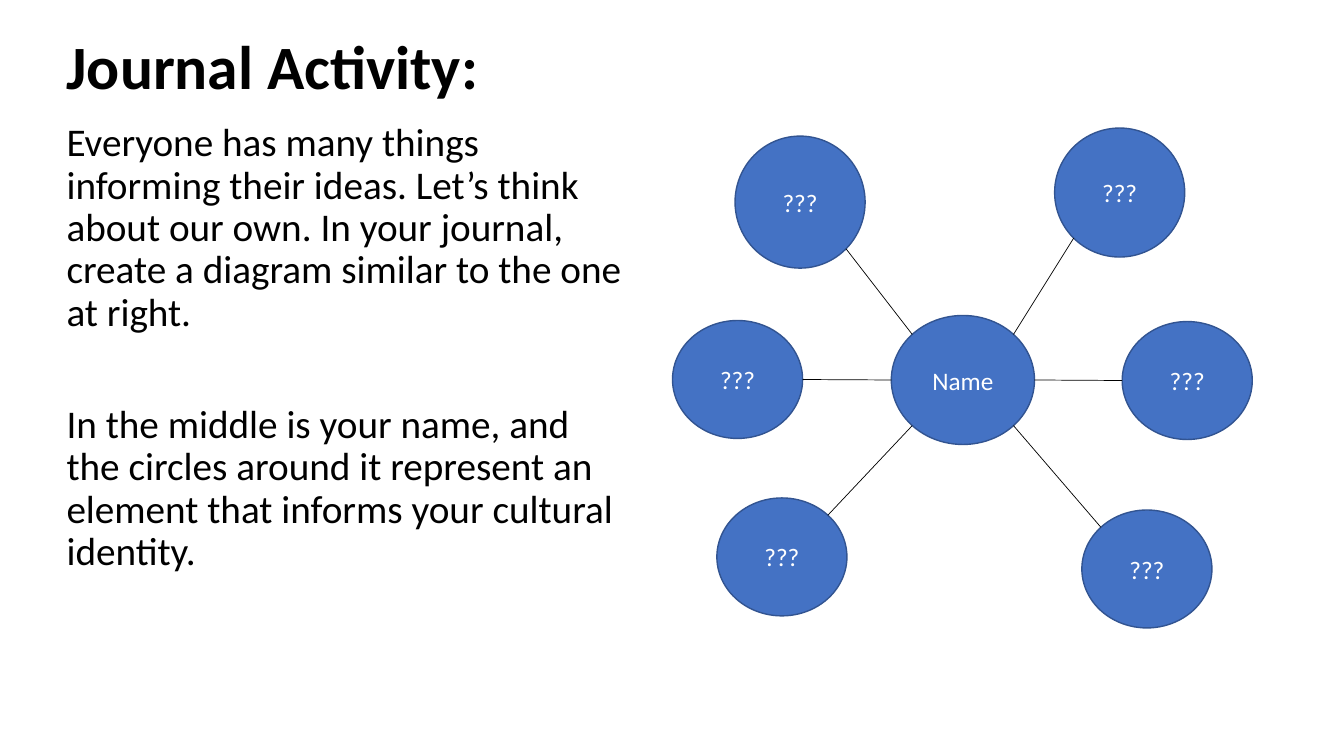
from math import sqrt

from lxml.etree import SubElement
from pptx import Presentation
from pptx.dml.color import RGBColor
from pptx.enum.shapes import MSO_CONNECTOR as CONN, MSO_SHAPE as SHAPE
from pptx.enum.text import MSO_ANCHOR as ANCHOR, MSO_AUTO_SIZE as FIT, PP_ALIGN as ALIGN
from pptx.oxml.ns import qn
from pptx.util import Inches, Pt


def rgb(hex_str):
    return RGBColor.from_string(hex_str)


def write(p, text, color, para, font):
    r = p.add_run()
    r.text = text
    r.font.color.rgb = rgb(color)
    for target, values in ((p, para), (r.font, {"name": "Calibri", **font})):
        for name, value in values.items():
            setattr(target, name, value)


prs = Presentation()
prs.slide_width, prs.slide_height = Inches(13.33), Inches(7.5)
s = prs.slides.add_slide(prs.slide_layouts[1])
title, body = s.shapes.title, s.placeholders[1]

# Title and body frames
for sp, box, anchor in ((title, (0.56, 0.19, 11.5, 0.99), ANCHOR.MIDDLE),
                        (body, (0.56, 1.17, 5.71, 5.84), ANCHOR.TOP)):
    sp.left, sp.top, sp.width, sp.height = map(Inches, box)
    tf = sp.text_frame
    tf.word_wrap, tf.auto_size, tf.vertical_anchor = True, FIT.NONE, anchor

write(title.text_frame.paragraphs[0], "Journal Activity:", "000000",
      {"alignment": ALIGN.LEFT, "line_spacing": 0.9}, {"size": Pt(44), "bold": True})

# Instructions: two unbulleted paragraphs with a wide gap between them
instructions = (
    ("Everyone has many things informing their ideas. Let’s think about our own. "
     "In your journal, create a diagram similar to the one at right.", 10),
    ("In the middle is your name, and the circles around it represent an element "
     "that informs your cultural identity.", 50),
)
tf = body.text_frame
for i, (text, before) in enumerate(instructions):
    p = tf.add_paragraph() if i else tf.paragraphs[0]
    write(p, text, "000000", {"line_spacing": 0.9, "space_before": Pt(before)},
          {"size": Pt(28)})
    pPr = p._p.get_or_add_pPr()
    pPr.set("marL", "0")
    pPr.set("indent", "0")
    SubElement(pPr, qn("a:buNone"))

# Circles: label, left, top, width, height, side of the hub (column, row)
hub = ("Name", 8.84, 3.13, 1.42, 1.28, 0, 0)
ideas = [("???", x, y, 1.29, h, col, row) for x, y, h, col, row in (
    (7.29, 1.35, 1.31, -1, -1),
    (10.46, 1.27, 1.28, 1, -1),
    (10.73, 5.06, 1.17, 1, 1),
    (11.13, 3.19, 1.17, 1, 0),
    (6.67, 3.18, 1.17, -1, 0),
    (7.11, 4.94, 1.17, -1, 1),
)]
for label, x, y, w, h, col, row in [hub] + ideas:
    sp = s.shapes.add_shape(SHAPE.OVAL, *map(Inches, (x, y, w, h)))
    sp.shadow.inherit = False
    sp.fill.solid()
    sp.fill.fore_color.rgb = rgb("4472C4")
    sp.line.color.rgb = rgb("325491")
    sp.line.width = Pt(1)
    tf = sp.text_frame
    tf.vertical_anchor = ANCHOR.MIDDLE
    write(tf.paragraphs[0], label, "FFFFFF", {"alignment": ALIGN.CENTER}, {"size": Pt(18)})

# Spokes: from each circle's edge to the facing edge of the hub
for idea in ideas:
    col, row = idea[5:]
    reach = sqrt(0.5) if row else 1
    ends = []
    for (_, x, y, w, h, _, _), way in ((idea, -reach), (hub, reach)):
        ends += [x + w / 2 * (1 + way * col), y + h / 2 * (1 + way * row)]
    line = s.shapes.add_connector(CONN.STRAIGHT, *map(Inches, ends))
    line.line.color.rgb = rgb("000000")
    line.line.width = Pt(0.5)
    SubElement(line._element.spPr, qn("a:effectLst"))

prs.save("out.pptx")
